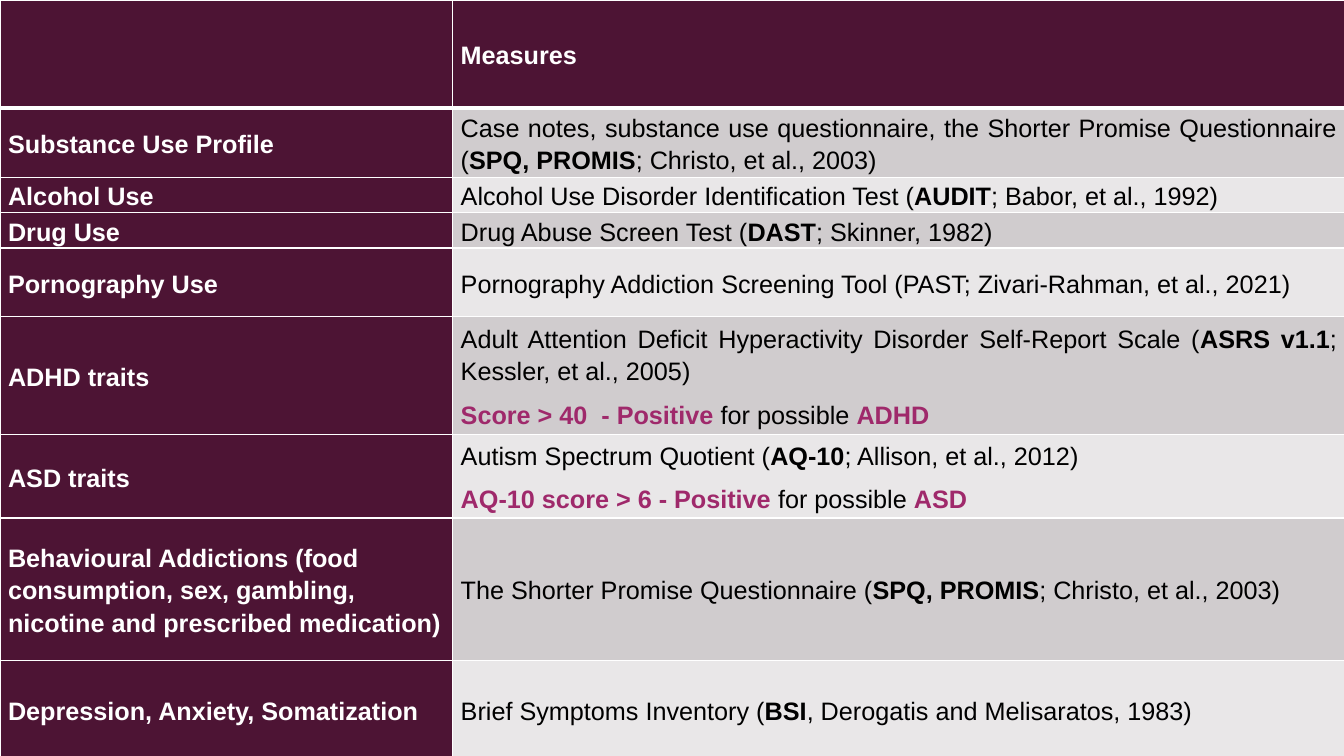
from dataclasses import dataclass
from typing import NamedTuple

from lxml.etree import SubElement
from pptx import Presentation
from pptx.dml.color import RGBColor as RGB
from pptx.enum.text import MSO_ANCHOR as Anchor, PP_ALIGN as Align
from pptx.oxml.ns import qn
from pptx.util import Inches, Pt

COLORS = {
    "plum": "4D1434",
    "dark": "D0CCCE",
    "light": "E9E7E8",
    "white": "FFFFFF",
    "black": "000000",
    "pink": "9F296B",
}
WIDTHS = (4.49, 8.85)
CELL = {
    "vertical_anchor": Anchor.MIDDLE,
    "margin_left": Inches(0.08),
    "margin_right": Inches(0.08),
    "margin_top": 0,
    "margin_bottom": 0,
}
PARA = {"line_spacing": 1.15, "space_before": Pt(0), "space_after": Pt(8)}
FONT = {"name": "Arial", "size": Pt(18)}


class Run(NamedTuple):
    text: str
    bold: bool = False
    color: str = "black"


Line = tuple[Run, ...]


@dataclass
class Row:
    label: str
    height: float
    lines: tuple[Line, ...]
    align: Align = Align.JUSTIFY


def cite(start: str, code: str, end: str) -> Line:
    return Run(start), Run(code, True), Run(end)


def score(rule: str, link: str, trait: str) -> Line:
    return Run(rule, True, "pink"), Run(link), Run(trait, True, "pink")


ROWS = (
    Row("", 1.07, ((Run("Measures", True, "white"),),)),
    Row("Substance Use Profile", 0.69, (
        cite("Case notes, substance use questionnaire, the Shorter Promise Questionnaire (",
             "SPQ, PROMIS", "; Christo, et al., 2003)"),)),
    Row("Alcohol Use", 0.35, (
        cite("Alcohol Use Disorder Identification Test (", "AUDIT", "; Babor, et al., 1992)"),)),
    Row("Drug Use", 0.35, (
        cite("Drug Abuse Screen Test (", "DAST", "; Skinner, 1982)"),)),
    Row("Pornography Use", 0.68, (
        (Run("Pornography Addiction Screening Tool (PAST; Zivari-Rahman, et al., 2021)"),),)),
    Row("ADHD traits", 1.17, (
        cite("Adult Attention Deficit Hyperactivity Disorder Self-Report Scale (",
             "ASRS v1.1", "; Kessler, et al., 2005)"),
        score("Score > 40  - Positive ", "for possible ", "ADHD"))),
    Row("ASD traits", 0.83, (
        cite("Autism Spectrum Quotient (", "AQ-10", "; Allison, et al., 2012)"),
        score("AQ-10 score > 6 - Positive", " for possible ", "ASD"))),
    Row("Behavioural Addictions (food consumption, sex, gambling, nicotine and prescribed medication)",
        1.41, (
            cite("The Shorter Promise Questionnaire (", "SPQ, PROMIS", "; Christo, et al., 2003)"),),
        Align.LEFT),
    Row("Depression, Anxiety, Somatization", 0.98, (
        cite("Brief Symptoms Inventory (", "BSI", ", Derogatis and Melisaratos, 1983)"),),
        Align.LEFT),
)


def apply(item: object, values: dict) -> None:
    for name, value in values.items():
        setattr(item, name, value)


def border(cell, top: float, base: float) -> None:
    props = cell._tc.get_or_add_tcPr()
    for side, width in {"L": 1, "R": 1, "T": top, "B": base}.items():
        line = SubElement(props, qn(f"a:ln{side}"), w=str(Pt(width)))
        fill = SubElement(line, qn("a:solidFill"))
        SubElement(fill, qn("a:srgbClr"), val=COLORS["white"])


def write(cell, lines: tuple[Line, ...], align: Align) -> None:
    frame = cell.text_frame
    for pos, line in enumerate(lines):
        para = frame.add_paragraph() if pos else frame.paragraphs[0]
        apply(para, PARA | {"alignment": align})
        for part in line:
            run = para.add_run()
            run.text = part.text
            apply(run.font, FONT | {"bold": part.bold})
            run.font.color.rgb = RGB.from_string(COLORS[part.color])


def paint(cell, lines: tuple[Line, ...], tone: str, index: int, align: Align) -> None:
    apply(cell, CELL)
    border(cell, 3 if index == 1 else 1, 3 if index == 0 else 1)
    cell.fill.solid()
    cell.fill.fore_color.rgb = RGB.from_string(COLORS[tone])
    write(cell, lines, align)


def main() -> None:
    deck = Presentation()
    apply(deck, {"slide_width": Inches(13.33), "slide_height": Inches(7.5)})
    slide = deck.slides.add_slide(deck.slide_layouts[6])
    high = sum(row.height for row in ROWS)
    table = slide.shapes.add_table(
        len(ROWS), len(WIDTHS), 0, 0, Inches(sum(WIDTHS)), Inches(high)).table
    for col, width in zip(table.columns, WIDTHS):
        col.width = Inches(width)
    for index, row in enumerate(ROWS):
        table.rows[index].height = Inches(row.height)
        label = ((Run(row.label, True, "white"),),) if row.label else ()
        tone = "plum" if index == 0 else "dark" if index % 2 else "light"
        paint(table.cell(index, 0), label, "plum", index, row.align)
        paint(table.cell(index, 1), row.lines, tone, index, Align.JUSTIFY)
    deck.save("out.pptx")


if __name__ == "__main__":
    main()
